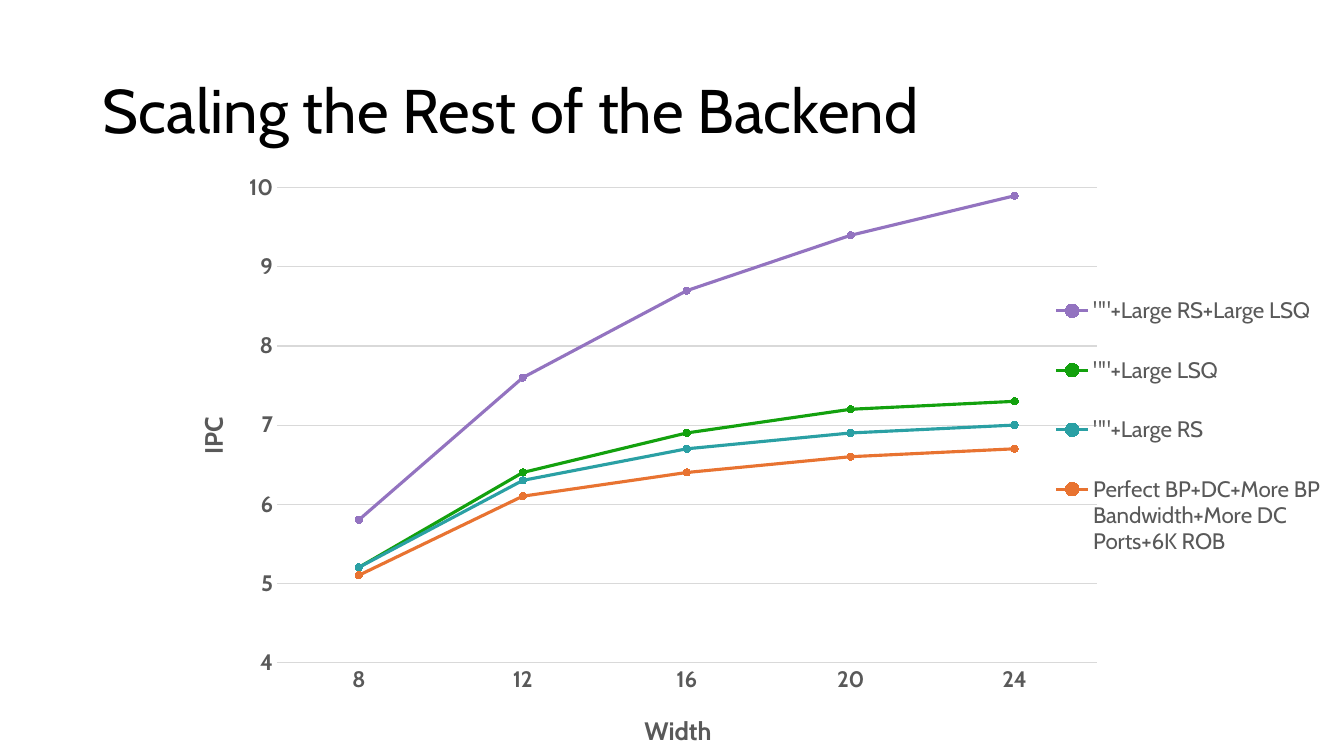
from pptx import Presentation
from pptx.chart.data import CategoryChartData as Data
from pptx.dml.color import RGBColor as RGB
from pptx.enum.chart import XL_CHART_TYPE as Kind, XL_LEGEND_POSITION as Place
from pptx.enum.chart import XL_MARKER_STYLE as Mark, XL_TICK_MARK as Tick
from pptx.enum.text import MSO_ANCHOR as Anchor
from pptx.oxml import parse_xml
from pptx.oxml.ns import nsdecls, qn
from pptx.util import Inches, Pt

COLORS = {"ink": "000000", "text": "595959", "grid": "D9D9D9",
          "purple": "9373C0", "green": "13A10E",
          "teal": "2AA0A4", "orange": "E87331"}


def style(font, size, color, bold=False):
    for name, value in {"name": "Cabin", "size": Pt(size), "bold": bold}.items():
        setattr(font, name, value)
    font.color.rgb = RGB.from_string(COLORS[color])


def arrange(part, index, inner=False, **sizes):
    """Give a chart part a manual layout in fractions of the chart."""
    for old in part.findall(qn("c:layout")):
        part.remove(old)
    rows = '<c:layoutTarget val="inner"/>' if inner else ""
    rows += "".join(f'<c:{k}Mode val="edge"/>' for k in "xy")
    rows += "".join(f'<c:{k} val="{v}"/>' for k, v in sizes.items())
    part.insert(index, parse_xml(
        f'<c:layout {nsdecls("c")}><c:manualLayout>{rows}'
        '</c:manualLayout></c:layout>'))


deck = Presentation()
deck.slide_width, deck.slide_height = Inches(13.33), Inches(7.5)
slide = deck.slides.add_slide(deck.slide_layouts[5])

# Title
title = slide.shapes.title
title.left, title.top = Inches(0.92), Inches(0.4)
title.width, title.height = Inches(11.5), Inches(1.45)
title.text_frame.vertical_anchor = Anchor.MIDDLE
head = title.text_frame.paragraphs[0]
head.text = "Scaling the Rest of the Backend"
head.alignment = 1
head.line_spacing = 0.9
style(head.runs[0].font, 44, "ink")

# Chart data
lines = [
    ('""+Large RS+Large LSQ', "purple", (5.8, 7.6, 8.7, 9.4, 9.9)),
    ('""+Large LSQ', "green", (5.2, 6.4, 6.9, 7.2, 7.3)),
    ('""+Large RS', "teal", (5.2, 6.3, 6.7, 6.9, 7)),
    ("Perfect BP+DC+More BP Bandwidth+More DC Ports+6K ROB", "orange",
     (5.1, 6.1, 6.4, 6.6, 6.7)),
]
data = Data()
data.categories = [str(width) for width in range(8, 25, 4)]
for name, color, values in lines:
    data.add_series(name, values)
chart = slide.shapes.add_chart(Kind.LINE_MARKERS, Inches(1.78), Inches(1.66),
                               Inches(11.5), Inches(5.84), data).chart
chart.has_title = False
style(chart.font, 10, "ink")
plot = chart.plots[0]
plot.vary_by_categories = False
arrange(chart._chartSpace.chart.plotArea, 0, inner=True,
        x=0.084, y=0.035, w=0.707, h=0.806)

# Series
for series, (name, color, values) in zip(plot.series, lines):
    series.smooth = False
    series.format.line.width = Pt(2.25)
    series.marker.style, series.marker.size = Mark.CIRCLE, 5
    shade = RGB.from_string(COLORS[color])
    series.format.line.color.rgb = shade
    series.marker.format.line.color.rgb = shade
    series.marker.format.fill.solid()
    series.marker.format.fill.fore_color.rgb = shade

# Axes
across, up = chart.category_axis, chart.value_axis
for axis, label, x, y in ((across, "Width", 0.397, 0.92),
                          (up, "IPC", 0.01, 0.416)):
    axis.major_tick_mark = axis.minor_tick_mark = Tick.NONE
    style(axis.tick_labels.font, 16, "text", True)
    para = axis.axis_title.text_frame.paragraphs[0]
    para.text = label
    style(para.runs[0].font, 18, "text", True)
    arrange(axis.axis_title._element, 1, x=x, y=y)
up.minimum_scale, up.maximum_scale, up.major_unit = 4, 10, 1
up.has_major_gridlines = True
up.format.line.fill.background()
for line in (across.format.line, up.major_gridlines.format.line):
    line.color.rgb = RGB.from_string(COLORS["grid"])
    line.width = Pt(0.75)

# Legend
chart.has_legend = True
legend = chart.legend
legend.position = Place.RIGHT
legend.include_in_layout = True
style(legend.font, 16, "text")
arrange(legend._element, 1, x=0.745, y=0.165, w=0.25, h=0.55)

deck.save("out.pptx")
